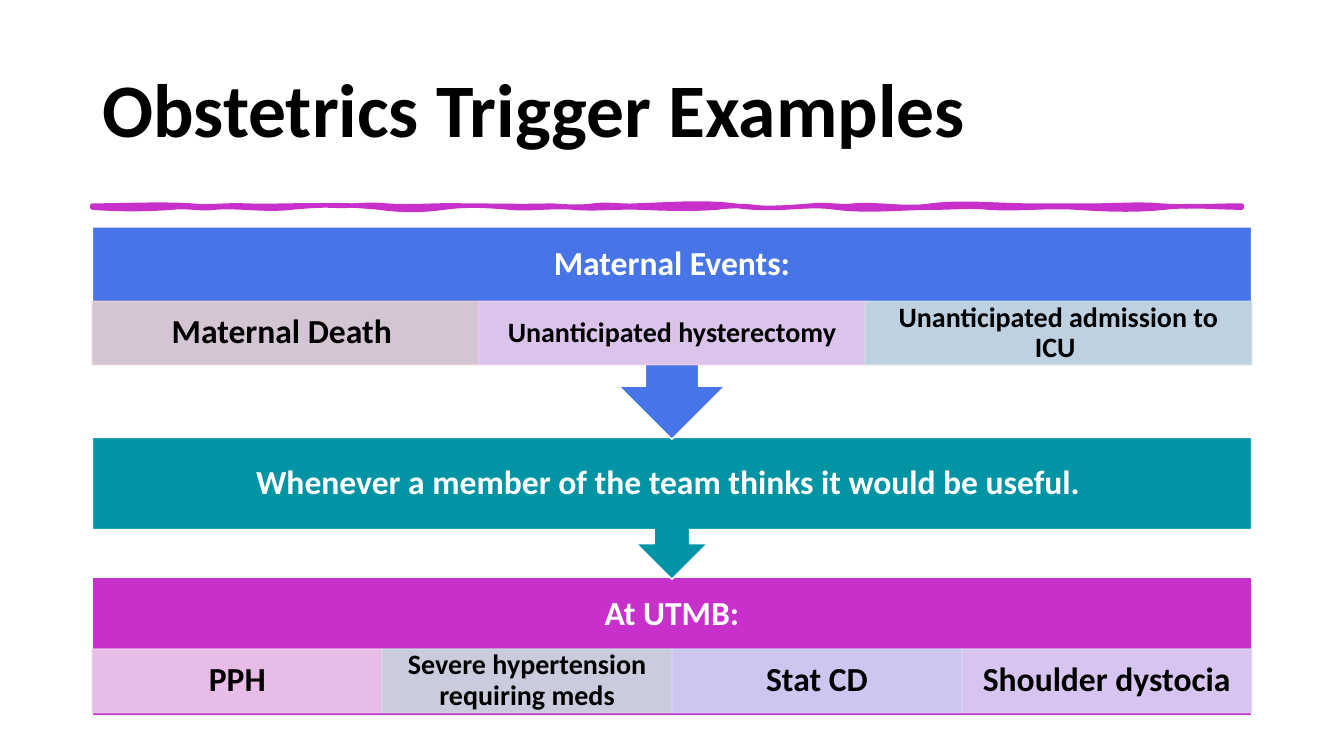
from lxml import etree
from pptx import Presentation
from pptx import util as u
from pptx.dml import color as col
from pptx.enum import shapes as sh, text as tx
from pptx.oxml import ns

Pt = u.Pt
HEX = {
    "white": "FFFFFF", "black": "000000",
    "blue": "4775E7", "teal": "0094A5", "plum": "C830CC",
    "rose": "E4CED2", "pink": "EBCDEC", "mist": "CCDCE1",
    "sky": "CFD6F6", "lilac": "DAD5F4",
}
LEFT, WIDE = 66, 828
HEAD, CELL = 53, 45.4

# Each bend: end x, then the lift of its two control points
UPPER = [
    (71, 0, -1.4), (109, 1.4, -0.7), (172, 0.7, -0.7), (210, 0.7, -1.4),
    (265, 1.4, -0.7), (328, 0, 0.7), (358, 0.7, 1.4), (388, -1.4, 0.7),
    (459, -0.7, -2.9), (514, 2.9, 1.4), (544, -1.4, 1.4), (599, -1.4, 2.9),
    (670, -2.9, 0), (716, 0, 0), (763, 0, -1.4), (821, 1.4, 0),
]
LOWER = [
    (821, 0, 0),
    (766, 0, -2.2), (703, 2.2, 1.4), (640, -1.4, 1.4), (602, -1.4, 0),
    (531, 0, 2.9), (476, -2.9, 1.4), (446, -1.4, -1.4), (391, 1.4, 0.7),
    (344, -0.7, 1.4), (298, -1.4, 1.4), (251, -1.4, -2.2), (205, 2.2, 2.2),
    (142, -2.2, -2.2), (87, 2.2, -1.4), (57, 1.4, -1.4), (0, 1.4, 1.4),
]


def rgb(name):
    return col.RGBColor.from_string(HEX[name])


def put(item, vals):
    for key, val in vals.items():
        setattr(item, key, val)


def paint(shape, fill, line, width):
    shape.shadow.inherit = False
    shape.fill.solid()
    shape.fill.fore_color.rgb = rgb(fill)
    shape.line.color.rgb = rgb(line)
    shape.line.width = Pt(width)


def write(shape, words, size, hue, align, pads=None):
    """Fill a shape with one bold line; pads are left, top, right, bottom."""
    frame = shape.text_frame
    put(frame, {"text": words, "word_wrap": True,
                "auto_size": tx.MSO_AUTO_SIZE.NONE,
                "vertical_anchor": tx.MSO_ANCHOR.MIDDLE})
    if pads:
        sides = ("left", "top", "right", "bottom")
        put(frame, {f"margin_{s}": Pt(p) for s, p in zip(sides, pads)})
    para = frame.paragraphs[0]
    put(para, {"alignment": align, "line_spacing": 0.9, "space_before": Pt(0)})
    font = para.runs[0].font
    put(font, {"name": "Calibri", "size": Pt(size), "bold": True})
    font.color.rgb = rgb(hue)


def add_title(slide, words, left, top, wide, high):
    title = slide.shapes.title
    put(title, {"left": Pt(left), "top": Pt(top),
                "width": Pt(wide), "height": Pt(high)})
    write(title, words, 54, "black", tx.PP_ALIGN.LEFT)


def trace(start, base, bends):
    """List two control points and an end for each bend about a level base."""
    spots = []
    for end, one, two in bends:
        third = (end - start) / 3
        spots += [(start + third, base + one), (end - third, base + two),
                  (end, base)]
        start = end
    return spots


def add_wave(slide, left, top):
    spots = trace(0, 0, UPPER) + trace(821, 1.4, LOWER)
    spots = [(Pt(left + x), Pt(top + y)) for x, y in spots]
    form = slide.shapes.build_freeform(Pt(left), Pt(top))
    form.add_line_segments(spots, close=True)
    wave = form.convert_to_shape()
    paint(wave, "plum", "plum", 3.25)
    # Turn each three straight steps into one cubic curve
    steps = list(wave.element.spPr.iter(ns.qn("a:lnTo")))
    for i in range(0, len(spots), 3):
        curve = etree.Element(ns.qn("a:cubicBezTo"))
        steps[i].addprevious(curve)
        for step in steps[i:i + 3]:
            curve.append(step[0])
            step.getparent().remove(step)


def add_block(slide, kind, words, hue, box, foot=0):
    """Draw a white-lettered block, keeping foot points free below its text."""
    block = slide.shapes.add_shape(kind, *map(Pt, box))
    paint(block, hue, "white", 1)
    write(block, words, 24, "white", tx.PP_ALIGN.CENTER,
          (13.5, 13.5, 13.5, 13.5 + foot))


def add_cells(slide, cells, left, top, wide, high):
    step = wide / len(cells)
    for i, (words, size, hue) in enumerate(cells):
        cell = slide.shapes.add_shape(
            sh.MSO_SHAPE.RECTANGLE, Pt(left + i * step), Pt(top),
            Pt(step), Pt(high))
        paint(cell, hue, hue, 1)
        for tint in cell.element.spPr.iter(ns.qn("a:srgbClr")):
            etree.SubElement(tint, ns.qn("a:alpha"), val="90000")
        side = 13.5 if size == 24 else 11.5
        write(cell, words, size, "black", tx.PP_ALIGN.CENTER,
              (side, 2.2, side, 2.2))


def main():
    deck = Presentation()
    put(deck, {"slide_width": Pt(960), "slide_height": Pt(540)})
    slide = deck.slides.add_slide(deck.slide_layouts[5])
    add_title(slide, "Obstetrics Trigger Examples", LEFT, 28.75, WIDE, 104.4)
    add_wave(slide, LEFT, 146.9)

    arrow = sh.MSO_SHAPE.DOWN_ARROW_CALLOUT
    add_block(slide, sh.MSO_SHAPE.RECTANGLE, "At UTMB:", "plum",
              (LEFT, 412.5, WIDE, 98.5), CELL)
    add_cells(slide, [
        ("PPH", 24, "pink"),
        ("Severe hypertension requiring meds", 20, "mist"),
        ("Stat CD", 24, "sky"),
        ("Shoulder dystocia", 24, "lilac"),
    ], LEFT, 463.7, WIDE, CELL)
    add_block(slide, arrow,
              "Whenever a member of the team thinks it would be useful. ",
              "teal", (LEFT, 312.5, WIDE, 101.3))
    add_block(slide, arrow, "Maternal Events:", "blue",
              (LEFT, 162.2, WIDE, 151.6), CELL)
    add_cells(slide, [
        ("Maternal Death ", 24, "rose"),
        ("Unanticipated hysterectomy", 20, "pink"),
        ("Unanticipated admission to ICU ", 20, "mist"),
    ], LEFT, 162.2 + HEAD, WIDE, CELL)
    deck.save("out.pptx")


if __name__ == "__main__":
    main()
